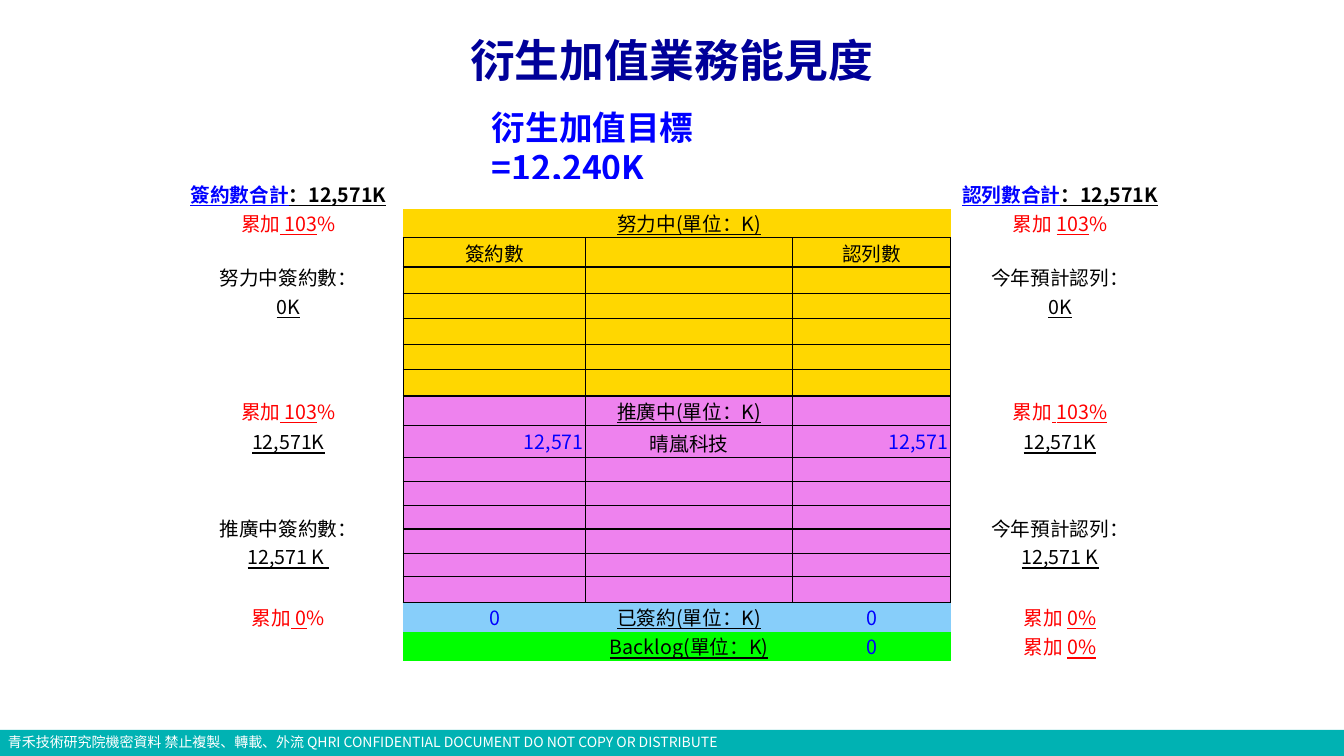
from lxml import etree
from pptx import Presentation
from pptx.dml.color import RGBColor
from pptx.enum.shapes import MSO_SHAPE
from pptx.enum.text import MSO_ANCHOR, PP_ALIGN
from pptx.oxml.ns import qn
from pptx.util import Inches, Pt

RECTANGLE = MSO_SHAPE.RECTANGLE
LEFT, CENTER, RIGHT = PP_ALIGN.LEFT, PP_ALIGN.CENTER, PP_ALIGN.RIGHT
TOP, MIDDLE, BOTTOM = MSO_ANCHOR.TOP, MSO_ANCHOR.MIDDLE, MSO_ANCHOR.BOTTOM


class Theme:
    font = "Noto Sans CJK SC"
    black, white, red, blue = "000000", "FFFFFF", "FF0000", "0000FF"
    navy, teal = "000099", "00B2B3"
    gold, violet, sky, green = "FFD700", "EE82EE", "87CEFA", "00FF00"
    title, target, body, footer, empty = 32, 24, 14, 10, 8


# Table layout: rows 2 to 15 of the three middle columns carry grid lines
COLUMNS = [2.28, 1.81, 2.05, 1.57, 2.17]
ROWS = ([0.29] * 3 + [0.26, 0.25, 0.26, 0.25, 0.26] + [0.29, 0.32]
        + [0.24, 0.24, 0.23, 0.24, 0.23, 0.26] + [0.29] * 2)
BANDS = ([Theme.white] + [Theme.gold] * 7 + [Theme.violet] * 8
         + [Theme.sky, Theme.green])
MERGES = [(2, 5), (11, 15)]
SIDES = {"lnL": (0, -1), "lnR": (0, 1), "lnT": (-1, 0), "lnB": (1, 0)}


def span(text, color=Theme.black, underline=False, bold=False):
    return {"text": text, "color": color, "underline": underline, "bold": bold}


def total(label, amount):
    return [[span(label, Theme.blue, True, True),
             span(f"：{amount}", underline=True, bold=True)]]


def share(*pieces):
    return [[span(text, Theme.red, line) for text, line in pieces]]


def heading(text):
    return [[span(text, underline=True)]]


def number(text):
    return [[span(text, Theme.blue)]]


def forecast(label, amount):
    return [[span(label)], [span(amount, underline=True)]]


CONTENT = {
    (0, 0): total("簽約數合計", "12,571K"),
    (0, 4): total("認列數合計", "12,571K"),
    (1, 0): share(("累加", False), (" 103", True), ("%", False)),
    (1, 2): heading("努力中(單位：K)"),
    (1, 4): share(("累加 ", False), ("103", True), ("%", False)),
    (2, 0): forecast("努力中簽約數：", "0K"),
    (2, 1): [[span("簽約數")]],
    (2, 3): [[span("認列數")]],
    (2, 4): forecast("今年預計認列：", "0K"),
    (8, 0): share(("累加", False), (" 103", True), ("%", False)),
    (8, 2): heading("推廣中(單位：K)"),
    (8, 4): share(("累加", False), (" 103%", True)),
    (9, 0): heading("12,571K"),
    (9, 1): number("12,571"),
    (9, 2): [[span("晴嵐科技")]],
    (9, 3): number("12,571"),
    (9, 4): heading("12,571K"),
    (11, 0): forecast("推廣中簽約數：", "12,571 K "),
    (11, 4): forecast("今年預計認列：", "12,571 K"),
    (16, 0): share(("累加", False), (" 0", True), ("%", False)),
    (16, 1): number("0"),
    (16, 2): heading("已簽約(單位：K)"),
    (16, 3): number("0"),
    (16, 4): share(("累加 ", False), ("0%", True)),
    (17, 2): heading("Backlog(單位：K)"),
    (17, 3): number("0"),
    (17, 4): share(("累加 ", False), ("0%", True)),
}
ALIGNMENTS = {(9, 1): RIGHT, (9, 3): RIGHT}
ANCHORS = {(9, 2): BOTTOM}


def in_grid(row, column):
    return 2 <= row <= 15 and 1 <= column <= 3


class Page:
    def __init__(self, deck, theme):
        self.theme = theme
        self.slide = deck.slides.add_slide(deck.slide_layouts[6])

    def fill_text(self, frame, paragraphs, size, align):
        for index, spans in enumerate(paragraphs):
            para = frame.paragraphs[0] if index == 0 else frame.add_paragraph()
            para.alignment = align
            for item in spans:
                run = para.add_run()
                run.text = item["text"]
                formats = {"name": self.theme.font, "size": Pt(size),
                           "bold": item["bold"], "underline": item["underline"]}
                for name, value in formats.items():
                    setattr(run.font, name, value)
                run.font.color.rgb = RGBColor.from_string(item["color"])
                etree.SubElement(run.font._element, qn("a:ea"), typeface=self.theme.font)

    def bar(self, left, top, width, height, color):
        shape = self.slide.shapes.add_shape(
            RECTANGLE, Inches(left), Inches(top), Inches(width), Inches(height))
        shape.shadow.inherit = False
        shape.fill.solid()
        shape.fill.fore_color.rgb = RGBColor.from_string(color)
        shape.line.fill.background()

    def text(self, left, top, width, height, spans, size,
             align=LEFT, anchor=TOP, right_inset=0.1):
        box = self.slide.shapes.add_textbox(
            Inches(left), Inches(top), Inches(width), Inches(height))
        formats = {"word_wrap": True, "vertical_anchor": anchor,
                   "margin_right": Inches(right_inset)}
        for name, value in formats.items():
            setattr(box.text_frame, name, value)
        self.fill_text(box.text_frame, [spans], size, align)

    def borders(self, cell, row, column):
        properties = cell._tc.get_or_add_tcPr()
        for index, (tag, (down, across)) in enumerate(SIDES.items()):
            line = etree.Element(qn(f"a:{tag}"), w=str(Pt(1)))
            if in_grid(row, column) or in_grid(row + down, column + across):
                fill = etree.SubElement(line, qn("a:solidFill"))
                etree.SubElement(fill, qn("a:srgbClr"), val=self.theme.black)
            else:
                etree.SubElement(line, qn("a:noFill"))
            properties.insert(index, line)

    def cell(self, cell, row, column):
        color = BANDS[row] if 1 <= column <= 3 else self.theme.white
        place = (row, column)
        formats = {"margin_left": Inches(0.02), "margin_right": Inches(0.02),
                   "margin_top": 0, "margin_bottom": 0,
                   "vertical_anchor": ANCHORS.get(place, MIDDLE)}
        for name, value in formats.items():
            setattr(cell, name, value)
        cell.fill.solid()
        cell.fill.fore_color.rgb = RGBColor.from_string(color)
        self.borders(cell, row, column)
        if place in CONTENT:
            self.fill_text(cell.text_frame, CONTENT[place], self.theme.body,
                           ALIGNMENTS.get(place, CENTER))
        else:
            etree.SubElement(cell.text_frame.paragraphs[0]._p,
                             qn("a:endParaRPr"), sz=str(self.theme.empty * 100))

    def table(self, left, top):
        table = self.slide.shapes.add_table(
            len(ROWS), len(COLUMNS), Inches(left), Inches(top),
            Inches(sum(COLUMNS)), Inches(sum(ROWS))).table
        table.first_row = table.horz_banding = False
        for column, width in zip(table.columns, COLUMNS):
            column.width = Inches(width)
        for row, height in zip(table.rows, ROWS):
            row.height = Inches(height)
        for row in range(len(ROWS)):
            for column in range(len(COLUMNS)):
                self.cell(table.cell(row, column), row, column)
        for first, last in MERGES:
            for column in (0, len(COLUMNS) - 1):
                table.cell(first, column).merge(table.cell(last, column))


def main():
    deck = Presentation()
    deck.slide_width, deck.slide_height = Inches(13.33), Inches(7.5)
    theme = Theme()
    page = Page(deck, theme)

    # Footer
    page.bar(0, 7.24, 13.33, 0.26, theme.teal)
    notice = "青禾技術研究院機密資料 禁止複製、轉載、外流 QHRI CONFIDENTIAL DOCUMENT DO NOT COPY OR DISTRIBUTE"
    page.text(-0.02, 7.23, 10.38, 0.27, [span(notice, theme.white)], theme.footer)

    # Title and target
    page.text(2.09, 0.17, 9.15, 0.85, [span("衍生加值業務能見度", theme.navy, bold=True)],
              theme.title, CENTER, MIDDLE)
    page.text(4.78, 1.01, 3.78, 0.5,
              [span("衍生加值目標=", theme.blue, bold=True),
               span("12,240K", theme.blue, True, True)],
              theme.target, right_inset=1.2)

    # Visibility table
    page.table(1.72, 1.78)
    deck.save("out.pptx")


if __name__ == "__main__":
    main()
